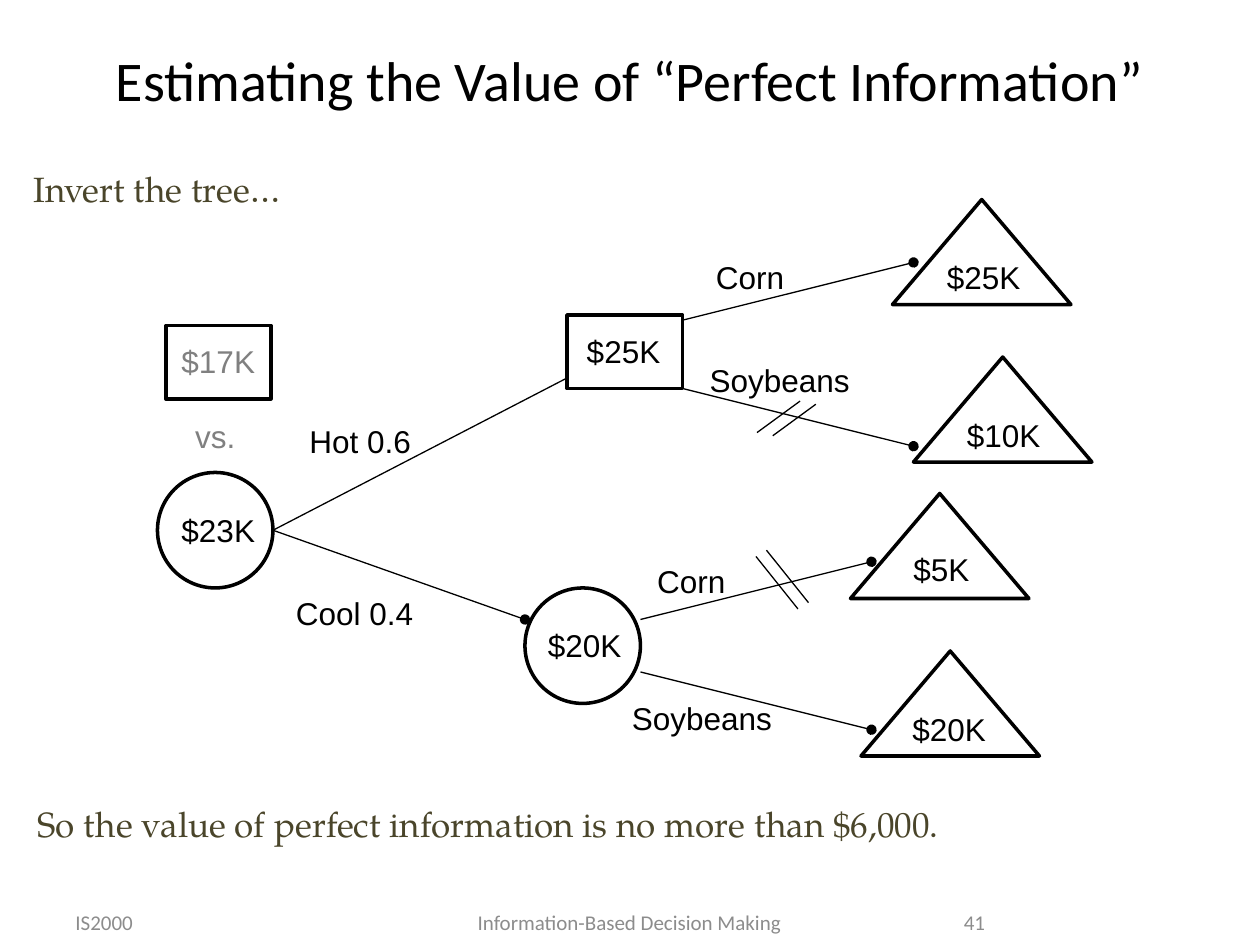
from pptx import Presentation
from pptx.dml.color import RGBColor
from pptx.enum.shapes import MSO_CONNECTOR, MSO_SHAPE as SHAPE
from pptx.enum.text import MSO_ANCHOR as ANCHOR, PP_ALIGN as ALIGN
from pptx.oxml.xmlchemy import OxmlElement
from pptx.util import Pt

PX = 7620
COLORS = {"ink": "000000", "muted": "808080", "note": "4A452A", "footer": "8C8C8C"}


def px(*values):
    return [v * PX for v in values]


def rgb(name):
    return RGBColor.from_string(COLORS[name])


def add_text(s, text, box, size, font, color, align=ALIGN.LEFT, anchor=ANCHOR.TOP, wrap=True):
    tf = s.shapes.add_textbox(*px(*box)).text_frame
    tf.word_wrap = wrap
    tf.vertical_anchor = anchor
    p = tf.paragraphs[0]
    p.text = text
    p.alignment = align
    p.font.size = Pt(size)
    p.font.name = font
    p.font.color.rgb = rgb(color)


def add_label(s, text, x, y, w, color="ink"):
    add_text(s, text, (x, y, w, 48), 18, "Arial", color, wrap=False)


def add_note(s, text, x, y):
    add_text(s, text, (x, y, 1040, 53), 20, "TeX Gyre Pagella", "note")


def add_footer(s, text, x, w, align):
    add_text(s, text, (x, 860, w, 37), 12, "Calibri", "footer", align, ANCHOR.MIDDLE)


def add_node(s, kind, x, y, w, h):
    sp = s.shapes.add_shape(kind, *px(x, y, w, h))
    sp.shadow.inherit = False
    sp.fill.background()
    sp.line.color.rgb = rgb("ink")
    sp.line.width = Pt(2)


def add_line(s, x1, y1, x2, y2, dot=False):
    line = s.shapes.add_connector(MSO_CONNECTOR.STRAIGHT, *px(x1, y1, x2, y2))
    line.line.color.rgb = rgb("ink")
    line.line.width = Pt(0.75)
    if dot:
        tail = OxmlElement("a:tailEnd")
        tail.set("type", "oval")
        line.line._get_or_add_ln().append(tail)
    line._element.spPr.append(OxmlElement("a:effectLst"))


def add_branches(s):
    add_line(s, 260, 505, 540, 360)
    add_line(s, 260, 505, 500, 590, dot=True)
    for x, upper, lower in ((650, 305, 370), (610, 590, 640)):
        add_line(s, x, upper, x + 220, upper - 55, dot=True)
        add_line(s, x, lower, x + 220, lower + 55, dot=True)
    for x, y, dx, dy in ((721, 412, 41, -30), (736, 415, 41, -30),
                         (720, 530, 40, 50), (730, 524, 40, 50)):
        add_line(s, x, y, x + dx, y + dy)


def add_nodes(s):
    for x, y in ((850, 190), (870, 340), (810, 470), (820, 620)):
        add_node(s, SHAPE.ISOSCELES_TRIANGLE, x, y, 170, 100)
    for x, y in ((150, 450), (500, 560)):
        add_node(s, SHAPE.OVAL, x, y, 110, 110)
    for x, y, w in ((540, 300, 110), (158, 310, 100)):
        add_node(s, SHAPE.RECTANGLE, x, y, w, 70)


def add_labels(s):
    for text, x, y in (("$25K", 890, 240), ("$10K", 909, 390), ("$20K", 857, 670),
                       ("$25K", 547, 310), ("$20K", 510, 590), ("$23K", 161, 481)):
        add_label(s, text, x, y, 95)
    for text, x, y, w in (("$5K", 858, 518, 78),
                          ("Hot 0.6", 283, 396, 122), ("Cool 0.4", 270, 560, 137),
                          ("Corn", 670, 240, 90), ("Soybeans", 664, 338, 158),
                          ("Corn", 614, 529, 90), ("Soybeans", 590, 660, 158)):
        add_label(s, text, x, y, w)
    add_label(s, "$17K", 161, 320, 95, "muted")
    add_label(s, "vs.", 174, 391, 62, "muted")


def main():
    prs = Presentation()
    prs.slide_width, prs.slide_height = px(1200, 900)
    s = prs.slides.add_slide(prs.slide_layouts[6])
    add_text(s, "Estimating the Value of “Perfect Information”", (60, 36, 1080, 79),
             32, "Calibri", "ink", ALIGN.CENTER, ANCHOR.MIDDLE)
    add_branches(s)
    add_nodes(s)
    add_labels(s)
    add_note(s, "Invert the tree…", 20, 154)
    add_note(s, "So the value of perfect information is no more than $6,000.", 24, 758)
    add_footer(s, "IS2000", 60, 280, ALIGN.LEFT)
    add_footer(s, "Information-Based Decision Making", 368, 463, ALIGN.CENTER)
    add_footer(s, "41", 860, 90, ALIGN.RIGHT)
    prs.save("out.pptx")


if __name__ == "__main__":
    main()
